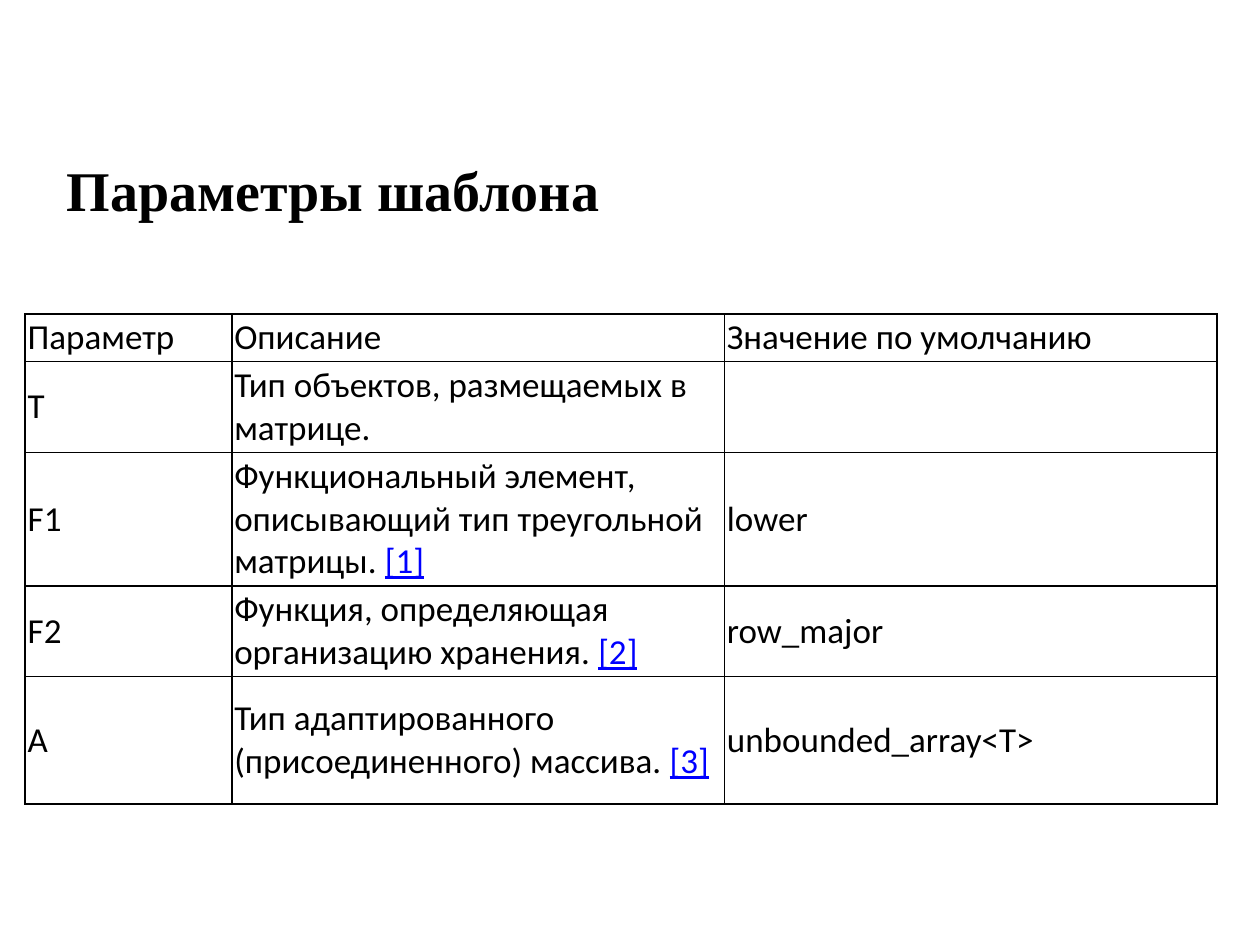
from lxml.etree import SubElement
from pptx import Presentation
from pptx.dml.color import RGBColor
from pptx.enum.text import MSO_ANCHOR, MSO_AUTO_SIZE, PP_ALIGN
from pptx.oxml.ns import qn
from pptx.util import Inches, Pt

BLACK = RGBColor(0x00, 0x00, 0x00)
BLUE = RGBColor(0x00, 0x00, 0xFF)

COLUMN_WIDTHS = [1.64, 3.91, 3.91]
ROW_HEIGHTS = [0.37, 0.71, 1.06, 0.71, 1.01]

# Each cell is a list of runs; runs in square brackets are reference marks
ROWS = [
    [["Параметр"], ["Описание"], ["Значение по умолчанию"]],
    [["T"], ["Тип объектов, размещаемых в матрице."], []],
    [["F1"],
     ["Функциональный элемент, описывающий тип треугольной матрицы. ", "[1]"],
     ["lower"]],
    [["F2"],
     ["Функция, определяющая организацию хранения. ", "[2]"],
     ["row_major"]],
    [["A"],
     ["Тип адаптированного (присоединенного) массива. ", "[3]"],
     ["unbounded_array<T>"]],
]


def add_span(para, text, font_name, size, color, bold=False):
    span = para.add_run()
    span.text = text
    span.font.name = font_name
    span.font.size = Pt(size)
    span.font.color.rgb = color
    span.font.bold = bold
    return span


def set_borders(cell, color, width):
    properties = cell._tc.get_or_add_tcPr()
    for position, side in enumerate(("a:lnL", "a:lnR", "a:lnT", "a:lnB")):
        line = SubElement(properties, qn(side), w=str(Pt(width)))
        fill = SubElement(line, qn("a:solidFill"))
        SubElement(fill, qn("a:srgbClr"), val=str(color))
        # Borders come before the cell fill
        properties.insert(position, line)


def fill_cell(cell, texts):
    cell.fill.background()
    cell.vertical_anchor = MSO_ANCHOR.MIDDLE
    cell.margin_left = cell.margin_right = Inches(0.02)
    cell.margin_top = cell.margin_bottom = Inches(0.02)
    set_borders(cell, BLACK, 1)
    para = cell.text_frame.paragraphs[0]
    for text in texts:
        is_reference = text.startswith("[")
        span = add_span(para, text, "Calibri", 20, BLUE if is_reference else BLACK)
        span.font.underline = is_reference


def place_title(slide, left, top, width, height):
    title = slide.shapes.title
    title.left, title.top = Inches(left), Inches(top)
    title.width, title.height = Inches(width), Inches(height)
    frame = title.text_frame
    frame.word_wrap = False
    frame.auto_size = MSO_AUTO_SIZE.NONE
    frame.vertical_anchor = MSO_ANCHOR.MIDDLE
    # The deeper bottom margin lifts the line above the middle of the box
    frame.margin_bottom = Inches(0.3)
    para = frame.paragraphs[0]
    para.alignment = PP_ALIGN.LEFT
    add_span(para, "Параметры шаблона", "Times New Roman", 32, BLACK, bold=True)


def place_table(slide, left, top, width, height):
    frame = slide.shapes.add_table(
        len(ROWS), len(COLUMN_WIDTHS),
        Inches(left), Inches(top), Inches(width), Inches(height))
    table = frame.table
    table.first_row = False
    table.horz_banding = False
    for column, column_width in zip(table.columns, COLUMN_WIDTHS):
        column.width = Inches(column_width)
    for row, row_height, contents in zip(table.rows, ROW_HEIGHTS, ROWS):
        row.height = Inches(row_height)
        for cell, texts in zip(row.cells, contents):
            fill_cell(cell, texts)


def main():
    deck = Presentation()
    deck.slide_width, deck.slide_height = Inches(10), Inches(7.5)
    page = deck.slides.add_slide(deck.slide_layouts[5])
    place_table(page, 0.2, 2.49, sum(COLUMN_WIDTHS), sum(ROW_HEIGHTS))
    place_title(page, 0.43, 1.17, 4.47, 0.91)
    deck.save("out.pptx")


if __name__ == "__main__":
    main()
